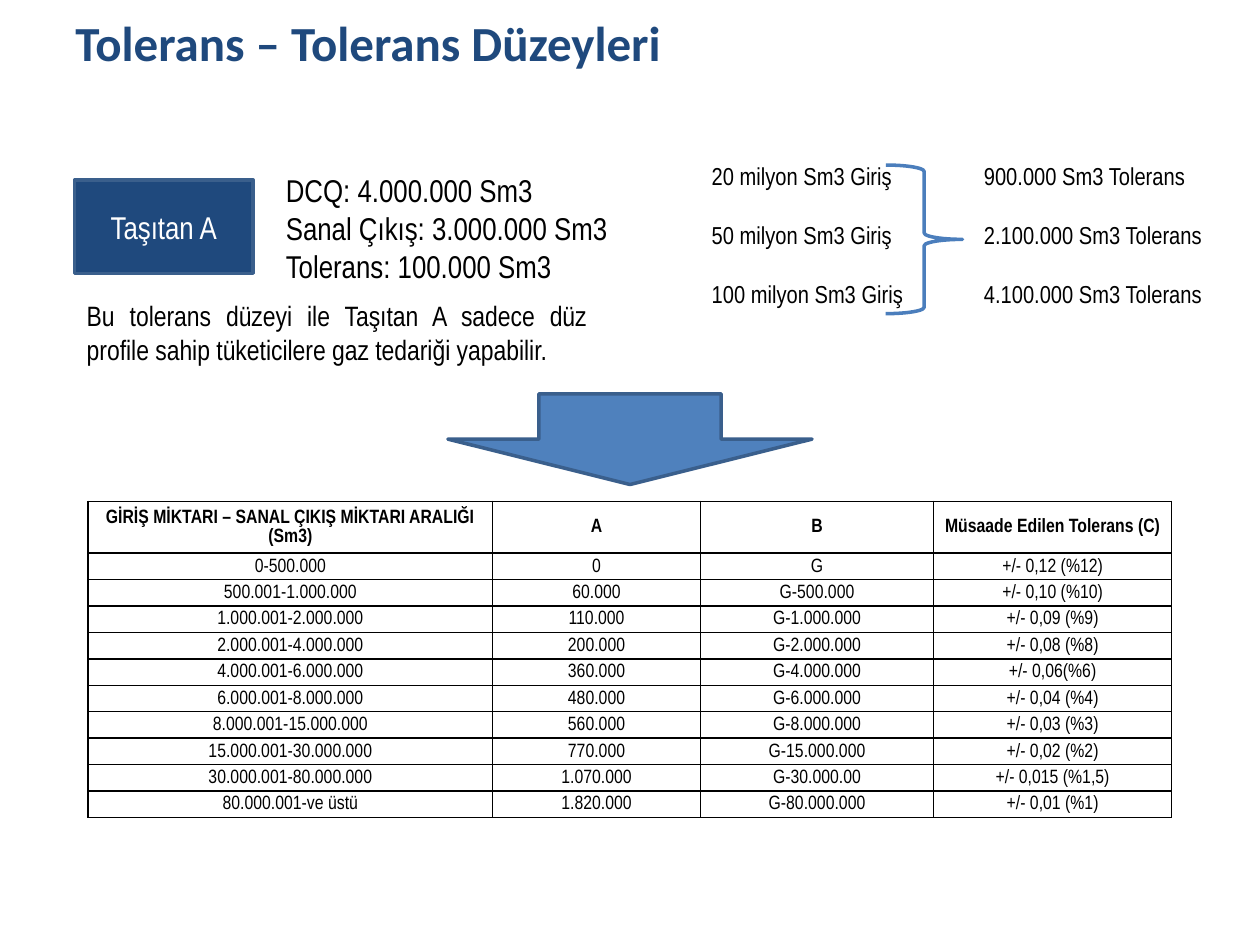
from lxml.etree import SubElement
from pptx import Presentation
from pptx.dml.color import RGBColor
from pptx.enum.shapes import MSO_SHAPE as Shape
from pptx.enum.text import MSO_ANCHOR as Anchor, PP_ALIGN as Align
from pptx.oxml.ns import qn
from pptx.util import Inches, Pt

NARROW = "Arial Narrow"
ENTRIES = ["20 milyon Sm3 Giriş", "50 milyon Sm3 Giriş", "100 milyon Sm3 Giriş"]
LIMITS = ["900.000 Sm3 Tolerans", "2.100.000 Sm3 Tolerans", "4.100.000 Sm3 Tolerans"]
FACTS = ["DCQ: 4.000.000 Sm3", "Sanal Çıkış: 3.000.000 Sm3", "Tolerans: 100.000 Sm3"]
NOTE = "Bu tolerans düzeyi ile Taşıtan A sadece düz profile sahip tüketicilere gaz tedariği yapabilir."
WIDTHS = [3.21, 1.65, 1.85, 1.89]
ROWS = [
    ["GİRİŞ MİKTARI – SANAL ÇIKIŞ MİKTARI ARALIĞI (Sm3)", "A", "B", "Müsaade Edilen Tolerans (C)"],
    ["0-500.000", "0", "G", "+/- 0,12 (%12)"],
    ["500.001-1.000.000", "60.000", "G-500.000", "+/- 0,10 (%10)"],
    ["1.000.001-2.000.000", "110.000", "G-1.000.000", "+/- 0,09 (%9)"],
    ["2.000.001-4.000.000", "200.000", "G-2.000.000", "+/- 0,08 (%8)"],
    ["4.000.001-6.000.000", "360.000", "G-4.000.000", "+/- 0,06(%6)"],
    ["6.000.001-8.000.000", "480.000", "G-6.000.000", "+/- 0,04 (%4)"],
    ["8.000.001-15.000.000", "560.000", "G-8.000.000", "+/- 0,03 (%3)"],
    ["15.000.001-30.000.000", "770.000", "G-15.000.000", "+/- 0,02 (%2)"],
    ["30.000.001-80.000.000", "1.070.000", "G-30.000.00", "+/- 0,015 (%1,5)"],
    ["80.000.001-ve üstü", "1.820.000", "G-80.000.000", "+/- 0,01 (%1)"],
]


def color(code):
    """Turn a hex string into a colour."""
    return RGBColor.from_string(code)


def style(frame, size, code="000000", face=NARROW, bold=False, align=Align.LEFT, gap=0):
    """Format every paragraph of a text frame."""
    for i, para in enumerate(frame.paragraphs):
        para.alignment = align
        if i and gap:
            para.space_before = Pt(gap)
        for run in para.runs:
            run.font.size, run.font.name, run.font.bold = Pt(size), face, bold
            run.font.color.rgb = color(code)


def add_text(slide, box, lines, size, **look):
    """Add a wrapped text box with one paragraph a line."""
    frame = slide.shapes.add_textbox(*map(Inches, box)).text_frame
    frame.word_wrap = True
    frame.text = "\n".join(lines)
    style(frame, size, **look)


def add_form(slide, kind, box, line, fill=None):
    """Add a flat preset shape."""
    form = slide.shapes.add_shape(kind, *map(Inches, box))
    form.shadow.inherit = False
    form.line.color.rgb = color(line)
    form.line.width = Pt(2)
    if fill:
        form.fill.solid()
        form.fill.fore_color.rgb = color(fill)
    else:
        form.fill.background()
    return form


def add_shipper(slide, left, top):
    """Place the shipper box, its facts and the note below."""
    form = add_form(slide, Shape.RECTANGLE, (left, top + 0.12, 1.42, 0.74), "3A5F8C", "1F497D")
    form.text_frame.text = "Taşıtan A"
    form.text_frame.vertical_anchor = Anchor.MIDDLE
    style(form.text_frame, 18, "FFFFFF", align=Align.CENTER)
    add_text(slide, (left + 1.58, top, 2.99, 1.01), FACTS, 18)
    add_text(slide, (left, top + 1.01, 4.17, 0.64), [NOTE], 16, align=Align.JUSTIFY)


def add_limits(slide, left, top):
    """Place the entries, the brace and the tolerances."""
    add_form(slide, Shape.RIGHT_BRACE, (left + 1.48, top + 0.08, 0.61, 1.18), "4B7EBC")
    for shift, lines in ((0, ENTRIES), (2.16, LIMITS)):
        add_text(slide, (left + shift, top, 2.31, 1.28), lines, 14, gap=16.8)


def add_arrow(slide, left, top, width, height):
    """Place a block arrow turned to point down."""
    box = (left, top, width, height)
    form = add_form(slide, Shape.RIGHT_ARROW, box, "3A5F8C", "4F81BD")
    form.rotation = 90


def add_edges(cell):
    """Draw a thin black line on all four sides of a cell."""
    props = cell._tc.get_or_add_tcPr()
    for i, side in enumerate(("a:lnL", "a:lnR", "a:lnT", "a:lnB")):
        edge = SubElement(props, qn(side), w=str(Pt(1)))
        SubElement(SubElement(edge, qn("a:solidFill")), qn("a:srgbClr"), val="000000")
        props.insert(i, edge)


def add_grid(slide, left, top):
    """Place the table of tolerance levels."""
    box = (left, top, sum(WIDTHS), 2.51)
    grid = slide.shapes.add_table(len(ROWS), len(WIDTHS), *map(Inches, box)).table
    grid.first_row = grid.horz_banding = False
    for col, width in zip(grid.columns, WIDTHS):
        col.width = Inches(width)
    for r, texts in enumerate(ROWS):
        grid.rows[r].height = Inches(0.21 if r else 0.41)
        for c, text in enumerate(texts):
            cell = grid.cell(r, c)
            cell.text_frame.text = text
            cell.vertical_anchor = Anchor.MIDDLE
            cell.margin_left = cell.margin_right = Inches(0.07)
            cell.margin_top = cell.margin_bottom = 0
            style(cell.text_frame, 11, bold=r == 0, align=Align.CENTER)
            cell.text_frame.paragraphs[0].line_spacing = Pt(11)
            cell.fill.background()
            add_edges(cell)


def main():
    """Build the slide and save it."""
    deck = Presentation()
    deck.slide_width, deck.slide_height = Inches(10), Inches(7.5)
    slide = deck.slides.add_slide(deck.slide_layouts[6])
    add_text(slide, (0.5, 0.05, 9, 1.25), ["Tolerans – Tolerans Düzeyleri"], 28,
             code="1F497D", face="Calibri", bold=True)
    add_grid(slide, 0.7, 3.98)
    add_arrow(slide, 4.64, 2.04, 0.72, 2.89)
    add_limits(slide, 5.55, 1.23)
    add_shipper(slide, 0.59, 1.31)
    deck.save("out.pptx")


if __name__ == "__main__":
    main()
